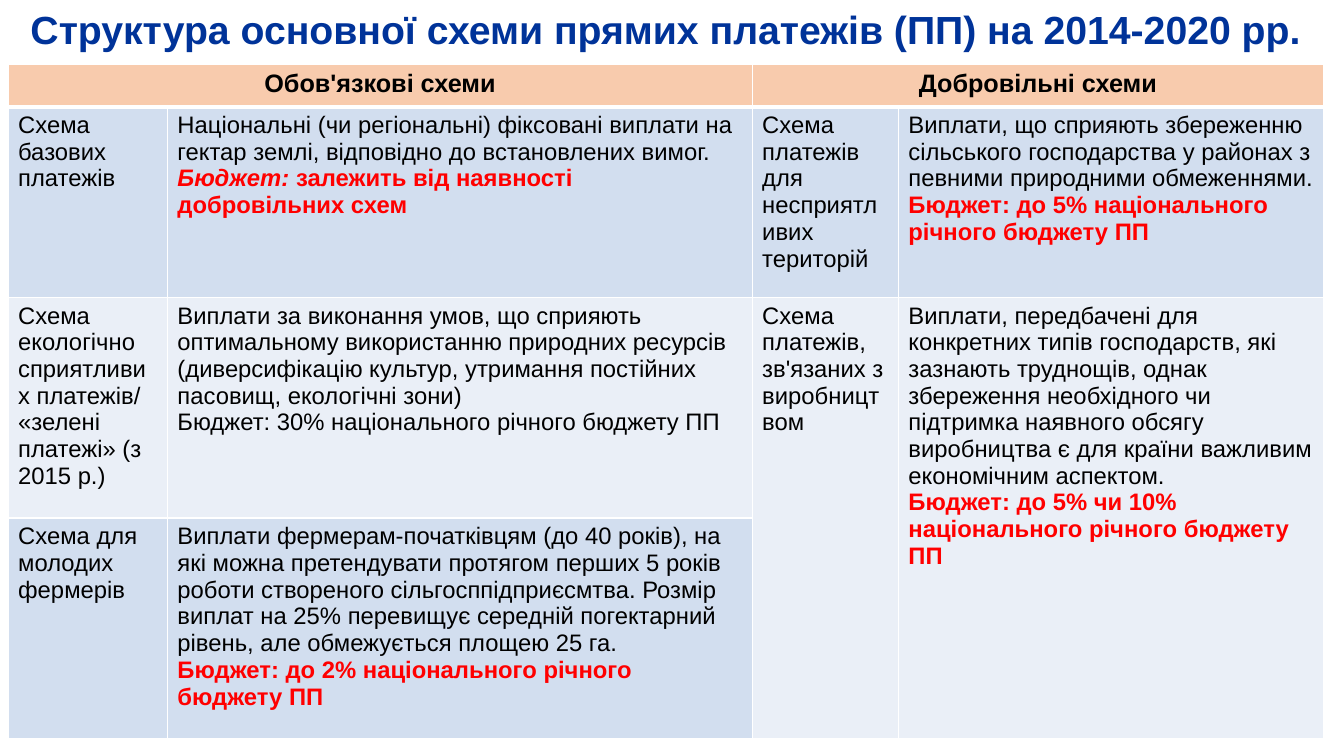
from dataclasses import dataclass
from itertools import product
from typing import Any

from lxml.etree import SubElement as Sub
from pptx import Presentation
from pptx.dml.color import RGBColor as Rgb
from pptx.enum.text import MSO_ANCHOR as Anchor, PP_ALIGN as Align
from pptx.oxml.ns import qn
from pptx.util import Inches, Pt


@dataclass(frozen=True)
class Theme:
    font: str = "Arial"
    title: str = "003399"
    text: str = "000000"
    alert: str = "FF0000"
    head: str = "F8CBAD"
    dark: str = "D2DEEF"
    light: str = "EAEFF7"
    line: str = "FFFFFF"
    title_size: int = 28
    head_size: int = 18
    body_size: int = 17


@dataclass(frozen=True)
class Part:
    """A run of text; alert runs are bold and red."""
    text: str
    alert: bool = False
    slant: bool = False


@dataclass(frozen=True)
class Cell:
    row: int
    col: int
    paras: tuple[tuple[Part, ...], ...]
    rows: int = 1
    cols: int = 1


LOOK = Theme()
WIDE, HIGH = Inches(13.33), Inches(7.5)
COLS = (1.58, 5.8, 1.45, 4.22)
ROWS = (0.42, 1.89, 2.19, 2.19)
LEFT, TOP = 0.08, 0.64


def plain(text: str) -> tuple[Part, ...]:
    return (Part(text),)


def alert(text: str) -> tuple[Part, ...]:
    return (Part(text, alert=True),)


CELLS = (
    # Headings
    Cell(0, 0, (plain("Обов'язкові схеми"),), cols=2),
    Cell(0, 2, (plain("Добровільні схеми"),), cols=2),
    # Mandatory schemes
    Cell(1, 0, (plain("Схема базових платежів"),)),
    Cell(1, 1, (
        plain("Національні (чи регіональні) фіксовані виплати на гектар землі, "
              "відповідно до встановлених вимог."),
        (Part("Бюджет:", True, True),
         Part(" залежить від наявності добровільних схем", True)))),
    Cell(2, 0, (plain("Схема екологічно сприятливих платежів/ "
                      "«зелені платежі» (з 2015 р.)"),)),
    Cell(2, 1, (
        plain("Виплати за виконання умов, що сприяють оптимальному використанню "
              "природних ресурсів (диверсифікацію культур, утримання постійних "
              "пасовищ, екологічні зони)"),
        plain("Бюджет: 30% національного річного бюджету ПП"))),
    Cell(3, 0, (plain("Схема для молодих фермерів"),)),
    Cell(3, 1, (
        plain("Виплати фермерам-початківцям (до 40 років), на які можна "
              "претендувати протягом перших 5 років роботи створеного "
              "сільгосппідприєсмтва. Розмір виплат на 25% перевищує середній "
              "погектарний рівень, але обмежується площею 25 га."),
        alert("Бюджет: до 2% національного річного бюджету ПП"))),
    # Voluntary schemes
    Cell(1, 2, (plain("Схема платежів для несприятливих територій"),)),
    Cell(1, 3, (
        plain("Виплати, що сприяють збереженню сільського господарства у районах "
              "з певними природними обмеженнями."),
        alert("Бюджет: до 5% національного річного бюджету ПП"))),
    Cell(2, 2, (plain("Схема платежів, зв'язаних з виробництвом"),), rows=2),
    Cell(2, 3, (
        plain("Виплати, передбачені для конкретних типів господарств, які "
              "зазнають труднощів, однак збереження необхідного чи підтримка "
              "наявного обсягу виробництва є для країни важливим економічним "
              "аспектом."),
        alert("Бюджет: до 5% чи 10% національного річного бюджету ПП")), rows=2),
)


def apply(item: Any, style: dict[str, Any]) -> None:
    for name, value in style.items():
        setattr(item, name, value)


def write(para: Any, text: str, size: int, color: str,
          bold: bool, slant: bool = False) -> None:
    run = para.add_run()
    run.text = text
    apply(run.font, {"name": LOOK.font, "size": Pt(size),
                     "bold": bold, "italic": slant})
    run.font.color.rgb = Rgb.from_string(color)


def edge(cell: Any, head: bool, below: bool) -> None:
    """Draw the white cell borders, thick under the header row."""
    props = cell._tc.get_or_add_tcPr()
    for side in "LRTB":
        thick = (side == "B" and head) or (side == "T" and below)
        line = Sub(props, qn(f"a:ln{side}"), w=str(Pt(3 if thick else 1)))
        fill = Sub(line, qn("a:solidFill"))
        Sub(fill, qn("a:srgbClr"), val=LOOK.line)


def add_title(slide: Any) -> None:
    title = slide.shapes.title
    apply(title, {"left": Inches(0.14), "top": 0,
                  "width": Inches(12.92), "height": Inches(TOP)})
    apply(title.text_frame, {"vertical_anchor": Anchor.MIDDLE, "word_wrap": True})
    para = title.text_frame.paragraphs[0]
    apply(para, {"alignment": Align.CENTER, "line_spacing": 0.9})
    write(para, "Структура основної схеми прямих платежів (ПП) на 2014-2020 рр.",
          LOOK.title_size, LOOK.title, True)


def fill_cell(grid: Any, item: Cell) -> None:
    cell = grid.cell(item.row, item.col)
    if item.rows * item.cols > 1:
        cell.merge(grid.cell(item.row + item.rows - 1, item.col + item.cols - 1))
    head = item.row == 0
    size = LOOK.head_size if head else LOOK.body_size
    frame = cell.text_frame
    for n, parts in enumerate(item.paras):
        para = frame.add_paragraph() if n else frame.paragraphs[0]
        para.alignment = Align.CENTER if head else Align.LEFT
        for part in parts:
            color = LOOK.alert if part.alert else LOOK.text
            write(para, part.text, size, color, head or part.alert, part.slant)


def add_grid(slide: Any) -> None:
    frame = slide.shapes.add_table(
        len(ROWS), len(COLS), Inches(LEFT), Inches(TOP),
        Inches(sum(COLS)), Inches(sum(ROWS)))
    grid = frame.table
    for col, width in zip(grid.columns, COLS):
        col.width = Inches(width)
    for row, height in zip(grid.rows, ROWS):
        row.height = Inches(height)
    for item in CELLS:
        fill_cell(grid, item)
    # Row bands and borders
    bands = (LOOK.head, LOOK.dark, LOOK.light, LOOK.dark)
    for r, c in product(range(len(ROWS)), range(len(COLS))):
        cell = grid.cell(r, c)
        edge(cell, r == 0, r == 1)
        cell.fill.solid()
        cell.fill.fore_color.rgb = Rgb.from_string(bands[r])


def main() -> None:
    deck = Presentation()
    apply(deck, {"slide_width": WIDE, "slide_height": HIGH})
    slide = deck.slides.add_slide(deck.slide_layouts[5])
    add_title(slide)
    add_grid(slide)
    deck.save("out.pptx")


if __name__ == "__main__":
    main()
